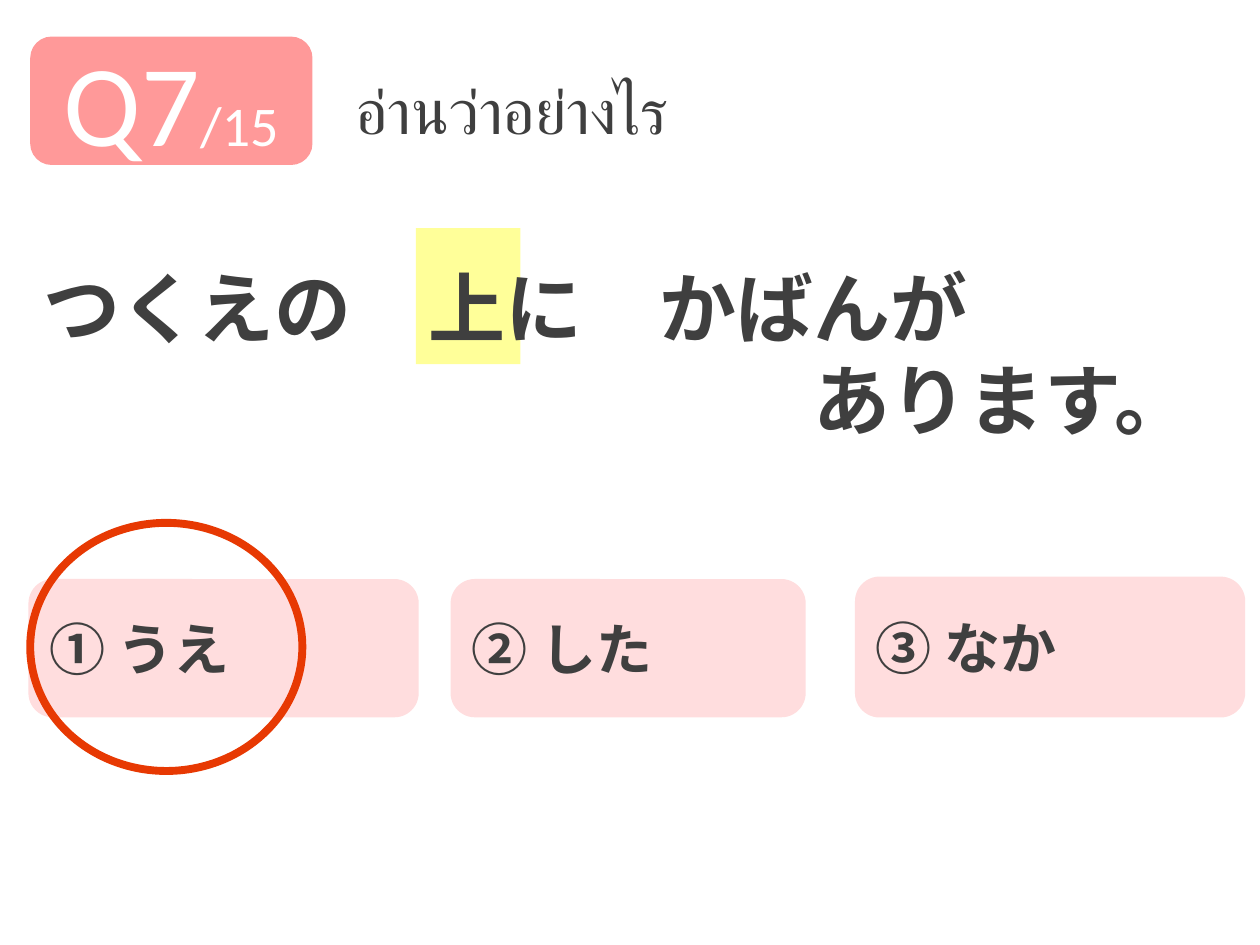
from dataclasses import dataclass

from pptx import Presentation
from pptx.dml.color import RGBColor
from pptx.enum import shapes, text
from pptx.util import Pt


@dataclass(frozen=True)
class Theme:
    ink: str = "3F3F3F"
    white: str = "FFFFFF"
    badge: str = "FF9999"
    choice: str = "FFDDDE"
    highlight: str = "FFFF99"
    answer: str = "E73903"
    body_font: str = "Roboto"
    badge_font: str = "Calibri"
    number_size: int = 66
    sentence_size: int = 44
    prompt_size: int = 36
    small_size: int = 32


class QuizSlide:
    def __init__(self, slide, theme):
        self.slide = slide
        self.theme = theme

    def style(self, run, size, color=None, font=None, bold=False):
        run.font.size = Pt(size)
        run.font.name = font or self.theme.body_font
        run.font.bold = bold
        run.font.color.rgb = RGBColor.from_string(color or self.theme.ink)

    def shape(self, kind, box, fill=None, line=None, line_width=2):
        shape = self.slide.shapes.add_shape(kind, *map(Pt, box))
        shape.shadow.inherit = False
        if fill:
            shape.fill.solid()
            shape.fill.fore_color.rgb = RGBColor.from_string(fill)
        else:
            shape.fill.background()
        if line:
            shape.line.color.rgb = RGBColor.from_string(line)
            shape.line.width = Pt(line_width)
        else:
            shape.line.fill.background()
        return shape

    def badge(self, box, number, total):
        badge = self.shape(shapes.MSO_SHAPE.ROUNDED_RECTANGLE, box, self.theme.badge)
        badge.text_frame.vertical_anchor = text.MSO_ANCHOR.MIDDLE
        label = badge.text_frame.paragraphs[0]
        label.alignment = text.PP_ALIGN.CENTER
        for part, size in ((number, self.theme.number_size), (total, self.theme.small_size)):
            run = label.add_run()
            run.text = part
            self.style(run, size, self.theme.white, self.theme.badge_font)

    def choice(self, box, wording):
        choice = self.shape(shapes.MSO_SHAPE.ROUNDED_RECTANGLE, box,
                            self.theme.choice, self.theme.choice)
        choice.text_frame.vertical_anchor = text.MSO_ANCHOR.MIDDLE
        choice.text_frame.text = wording
        label = choice.text_frame.paragraphs[0]
        label.alignment = text.PP_ALIGN.LEFT
        self.style(label.runs[0], self.theme.small_size, bold=True)

    def text(self, box, wording, size, bold=False):
        frame = self.slide.shapes.add_textbox(*map(Pt, box)).text_frame
        frame.word_wrap = True
        frame.auto_size = text.MSO_AUTO_SIZE.SHAPE_TO_FIT_TEXT
        frame.text = wording
        for paragraph in frame.paragraphs:
            self.style(paragraph.runs[0], size, bold=bold)
        return frame


def main():
    deck = Presentation()
    deck.slide_width, deck.slide_height = Pt(720), Pt(540)
    theme = Theme()
    quiz = QuizSlide(deck.slides.add_slide(deck.slide_layouts[6]), theme)

    # Highlight behind the word being asked about
    quiz.shape(shapes.MSO_SHAPE.RECTANGLE, (237.6, 130.3, 59.8, 77.8), theme.highlight)

    # Question number
    quiz.badge((17.3, 20.9, 161.3, 73.4), "Q7", "/15")

    # Answer choices
    for left, top, width, height, wording in (
        (17.3, 331.9, 221, 77, "① うえ"),
        (258.5, 331.9, 200.9, 77, "② した"),
        (489.6, 330.5, 221, 78.5, "③ なか"),
    ):
        quiz.choice((left, top, width, height), wording)

    # Sentence, its second line indented by ten full-width characters
    sentence = quiz.text((18, 145.4, 681.8, 113.8), "つくえの　上に　かばんが\nあります。",
                         theme.sentence_size, bold=True)
    ending = sentence.paragraphs[1]
    ending._p.get_or_add_pPr().set("marL", str(Pt(10 * theme.sentence_size)))

    # Instruction
    quiz.text((195.8, 37.4, 493.2, 51.1), "อ่านว่าอย่างไร", theme.prompt_size)

    # Ring around the right answer
    quiz.shape(shapes.MSO_SHAPE.OVAL, (17.3, 298.8, 155.5, 141.8),
               line=theme.answer, line_width=4.5)

    deck.save("out.pptx")


if __name__ == "__main__":
    main()
